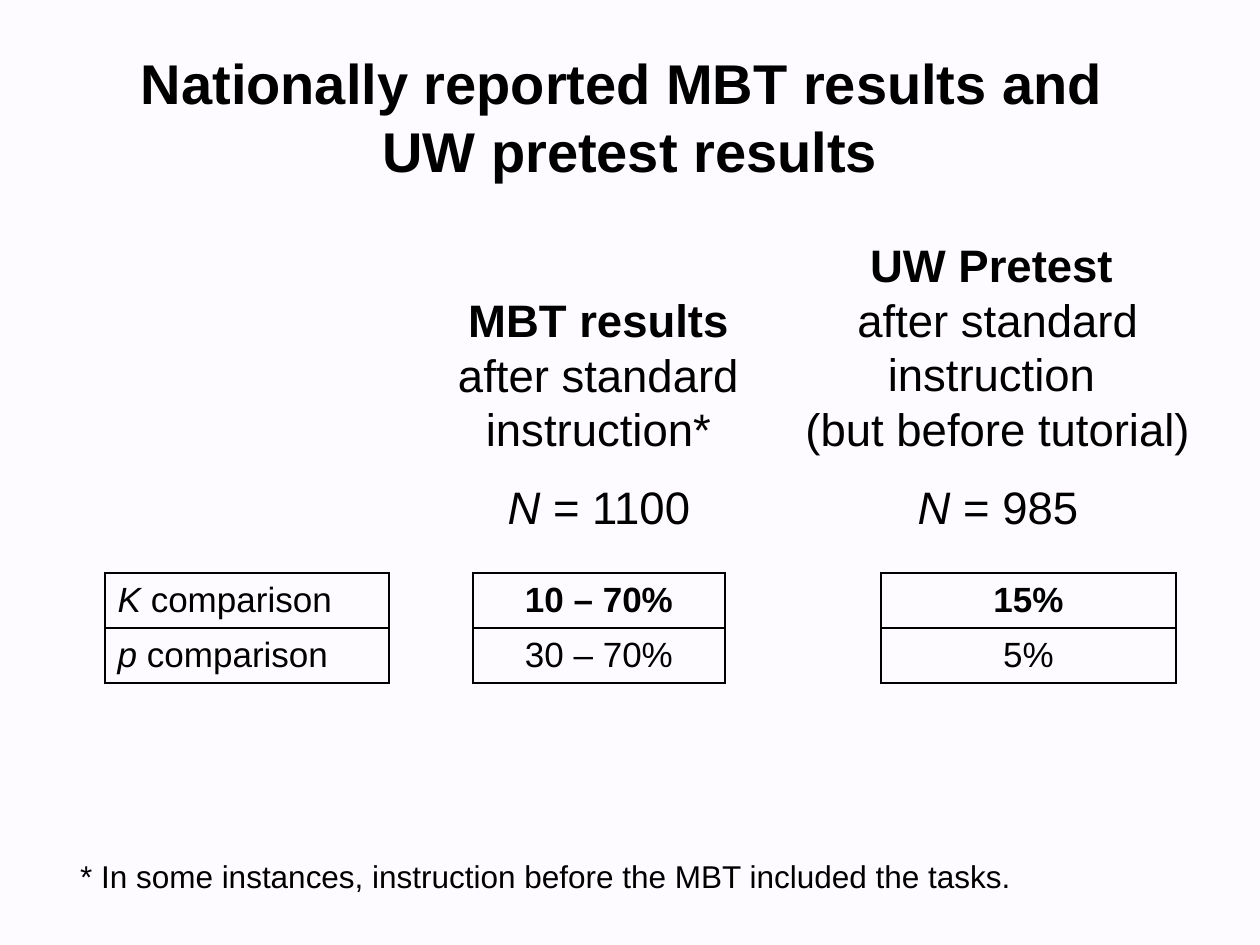
from dataclasses import dataclass

from lxml.etree import SubElement
from pptx import Presentation
from pptx.dml.color import RGBColor
from pptx.enum.text import MSO_ANCHOR, PP_ALIGN
from pptx.oxml.ns import qn
from pptx.util import Emu, Pt


@dataclass(frozen=True)
class Theme:
    font: str = "Arial"
    background: str = "FDFBFF"
    ink: str = "000000"
    title: int = 32
    heading: int = 26
    cell: int = 20
    footnote: int = 18
    border: int = 1


THEME = Theme()
PX_PER_INCH = 126
BORDER_TAGS = {"left": "a:lnL", "right": "a:lnR", "top": "a:lnT", "bottom": "a:lnB"}


def px(length):
    return Emu(round(length * 914400 / PX_PER_INCH))


def write_paragraph(paragraph, runs, size, align=PP_ALIGN.CENTER):
    """Fill a paragraph from (text, style) pairs; style is "", "bold" or "italic"."""
    paragraph.alignment = align
    paragraph.font.name = THEME.font
    paragraph.font.size = Pt(size)
    paragraph.font.color.rgb = RGBColor.from_string(THEME.ink)
    for text, style in runs:
        for index, line in enumerate(text.split("\n")):
            if index:
                paragraph.add_line_break()
            run = paragraph.add_run()
            run.text = line
            if style:
                setattr(run.font, style, True)


def add_text(slide, box, paragraphs, size, wrap=True, anchor=MSO_ANCHOR.TOP):
    frame = slide.shapes.add_textbox(*map(px, box)).text_frame
    frame.word_wrap = wrap
    frame.vertical_anchor = anchor
    for index, runs in enumerate(paragraphs):
        paragraph = frame.add_paragraph() if index else frame.paragraphs[0]
        write_paragraph(paragraph, runs, size)


def add_title(slide, box):
    title = "Nationally reported MBT results and \nUW pretest results"
    add_text(slide, box, [[(title, "bold")]], THEME.title, anchor=MSO_ANCHOR.MIDDLE)


def add_column_heading(slide, box, name, condition, count, count_box):
    """Place a heading in the box and its sample size in count_box, relative to it."""
    add_text(slide, box, [[(name, "bold")], [(condition, "")]], THEME.heading)
    left, top, width, height = count_box
    add_text(slide, (box[0] + left, box[1] + top, width, height),
             [[("N ", "italic"), (f"= {count}", "")]], THEME.heading, wrap=False)


def set_borders(cell, visible_sides):
    properties = cell._tc.get_or_add_tcPr()
    for side, tag in BORDER_TAGS.items():
        line = SubElement(properties, qn(tag), w=str(Pt(THEME.border)))
        if side in visible_sides:
            fill = SubElement(line, qn("a:solidFill"))
            SubElement(fill, qn("a:srgbClr"), val=THEME.ink)
        else:
            SubElement(line, qn("a:noFill"))


def add_results_table(slide, box):
    column_widths = (284, 84, 252, 156, 295)
    rows = (
        ("K ", "10 – 70%", "15%", "bold"),
        ("p ", "30 – 70%", "5%", ""),
    )
    table = slide.shapes.add_table(len(rows), len(column_widths), *map(px, box)).table
    table.first_row = table.horz_banding = False
    for column, width in zip(table.columns, column_widths):
        column.width = px(width)
    for row_index, (symbol, mbt, pretest, style) in enumerate(rows):
        table.rows[row_index].height = px(box[3] // len(rows))
        contents = {
            0: ([(symbol, "italic"), ("comparison", "")], PP_ALIGN.LEFT),
            2: ([(mbt, style)], PP_ALIGN.CENTER),
            4: ([(pretest, style)], PP_ALIGN.CENTER),
        }
        for column_index in range(len(column_widths)):
            cell = table.cell(row_index, column_index)
            cell.vertical_anchor = MSO_ANCHOR.MIDDLE
            if column_index in contents:
                runs, align = contents[column_index]
                write_paragraph(cell.text_frame.paragraphs[0], runs, THEME.cell, align)
                set_borders(cell, BORDER_TAGS)
            else:
                set_borders(cell, ("left", "right"))
            cell.fill.background()


def add_footnote(slide, box):
    note = "* In some instances, instruction before the MBT included the tasks."
    add_text(slide, box, [[(note, "")]], THEME.footnote, wrap=False)


def main():
    presentation = Presentation()
    presentation.slide_width, presentation.slide_height = px(1260), px(945)
    slide = presentation.slides.add_slide(presentation.slide_layouts[6])
    slide.background.fill.solid()
    slide.background.fill.fore_color.rgb = RGBColor.from_string(THEME.background)

    add_title(slide, (39, 32, 1182, 168))
    add_column_heading(slide, (420, 286, 357, 176), "MBT results",
                       "after standard instruction*", 1100, (73, 187, 212, 67))
    add_column_heading(slide, (746, 231, 504, 232), "UW Pretest ",
                       "after standard instruction \n(but before tutorial)",
                       985, (159, 242, 186, 67))
    add_footnote(slide, (63, 851, 965, 50))
    add_results_table(slide, (105, 573, 1071, 110))
    presentation.save("out.pptx")


if __name__ == "__main__":
    main()
